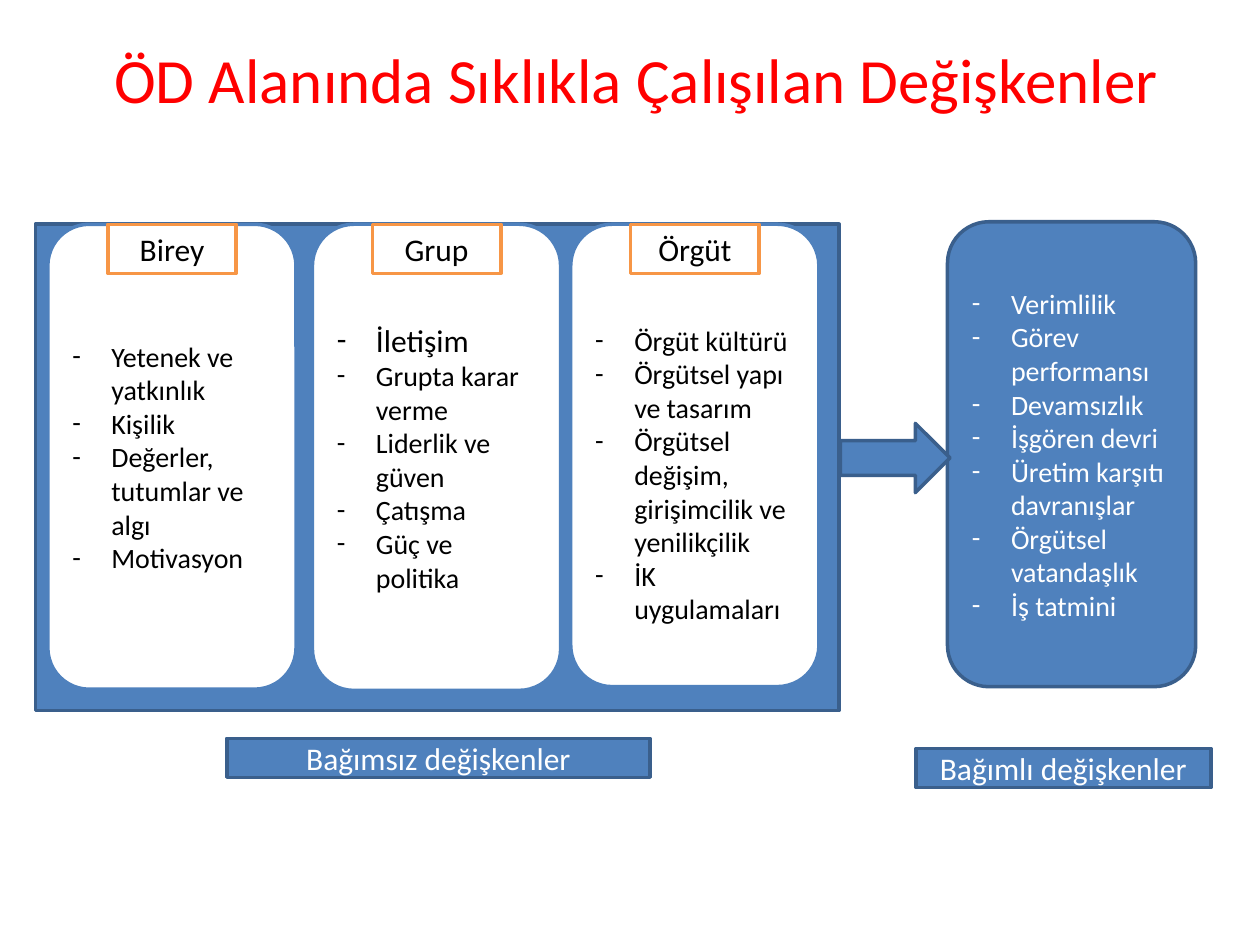
import collections
import pptx
import pptx.util
import pptx.dml.color
import pptx.enum.shapes
import pptx.enum.text
import pptx.oxml.xmlchemy
import lxml.etree

RGBColor = pptx.dml.color.RGBColor
Shapes = pptx.enum.shapes.MSO_SHAPE
Align = pptx.enum.text.PP_ALIGN
Anchor = pptx.enum.text.MSO_ANCHOR
Inches = pptx.util.Inches
Pt = pptx.util.Pt

BLUE = RGBColor(0x4F, 0x81, 0xBD)
DARK_BLUE = RGBColor(0x3A, 0x5F, 0x8C)
ORANGE = RGBColor(0xF7, 0x96, 0x46)
WHITE = RGBColor(0xFF, 0xFF, 0xFF)
BLACK = RGBColor(0, 0, 0)
RED = RGBColor(0xFF, 0, 0)

FONT = "Calibri"
SLIDE_WIDTH = Inches(10)
SLIDE_HEIGHT = Inches(7.5)
COLUMN = SLIDE_WIDTH / 100
ROW = SLIDE_HEIGHT / 75
DRAWING = "http://schemas.openxmlformats.org/drawingml/2006/main"

Box = collections.namedtuple("Box", "left top width height")
Level = collections.namedtuple("Level", "heading box items first_size top_gap")

LEVELS = [
    Level("Birey", Box(1, 0, 19.7, 36.9),
          ["Yetenek ve yatkınlık", "Kişilik", "Değerler, tutumlar ve algı",
           "Motivasyon"], 16, 0),
    Level("Grup", Box(22, 0, 19.7, 37),
          ["İletişim", "Grupta karar verme", "Liderlik ve güven", "Çatışma",
           "Güç ve politika"], 18, 0),
    Level("Örgüt", Box(42.5, 0, 19.7, 36.7),
          ["Örgüt kültürü", "Örgütsel yapı ve tasarım",
           "Örgütsel değişim, girişimcilik ve yenilikçilik",
           "İK uygulamaları"], 16, 3),
]
OUTCOMES = ["Verimlilik", "Görev performansı", "Devamsızlık", "İşgören devri",
            "Üretim karşıtı davranışlar", "Örgütsel vatandaşlık", "İş tatmini"]


def place(shape, box):
    shape.left, shape.width = int(box.left * COLUMN), int(box.width * COLUMN)
    shape.top, shape.height = int(box.top * ROW), int(box.height * ROW)


def inside(outer, inner):
    return inner._replace(left=outer.left + inner.left, top=outer.top + inner.top)


def add_run(paragraph, text, size, color):
    run = paragraph.add_run()
    run.text = text
    run.font.name = FONT
    run.font.size = Pt(size)
    run.font.color.rgb = color


def add_block(slide, kind, box, fill=BLUE, line=DARK_BLUE):
    shape = slide.shapes.add_shape(kind, 0, 0, 0, 0)
    place(shape, box)
    shape.shadow.inherit = False
    shape.fill.solid()
    shape.fill.fore_color.rgb = fill
    shape.line.color.rgb = line
    shape.line.width = Pt(2)
    shape.text_frame.word_wrap = True
    shape.text_frame.vertical_anchor = Anchor.MIDDLE
    return shape


def add_label(slide, box, text, fill=BLUE, line=DARK_BLUE, color=WHITE):
    shape = add_block(slide, Shapes.RECTANGLE, box, fill, line)
    paragraph = shape.text_frame.paragraphs[0]
    paragraph.alignment = Align.CENTER
    add_run(paragraph, text, 18, color)


def add_dash(paragraph):
    properties = paragraph._p.get_or_add_pPr()
    indent = Inches(0.31)
    properties.set("marL", str(indent))
    properties.set("indent", str(-indent))
    font = lxml.etree.SubElement(properties, f"{{{DRAWING}}}buFont")
    font.set("typeface", FONT)
    lxml.etree.SubElement(properties, f"{{{DRAWING}}}buChar").set("char", "-")


def add_list_card(slide, box, items, fill, line, color, first_size=16, top_gap=0):
    shape = add_block(slide, Shapes.ROUNDED_RECTANGLE, box, fill, line)
    frame = shape.text_frame
    frame.margin_top = int(Inches(0.05) + top_gap * ROW)
    for index, item in enumerate(items):
        paragraph = frame.add_paragraph() if index else frame.paragraphs[0]
        paragraph.alignment = Align.LEFT
        add_dash(paragraph)
        add_run(paragraph, item, 16 if index else first_size, color)


def add_title(slide, box):
    title = slide.shapes.title
    place(title, box)
    title.text_frame.vertical_anchor = Anchor.MIDDLE
    paragraph = title.text_frame.paragraphs[0]
    paragraph.alignment = Align.CENTER
    add_run(paragraph, "ÖD Alanında Sıklıkla Çalışılan Değişkenler", 36, RED)


def add_independent_variables(slide, box):
    add_block(slide, Shapes.RECTANGLE, box)
    for level in LEVELS:
        card = inside(box, level.box)
        add_list_card(slide, card, level.items, WHITE, BLUE, BLACK,
                      level.first_size, level.top_gap)
        tag_width = 10.2
        tag = Box((card.width - tag_width) / 2, 0, tag_width, 3.9)
        add_label(slide, inside(card, tag), level.heading, WHITE, ORANGE, BLACK)
    add_label(slide, inside(box, Box(15.2, 40.8, 33.6, 3.1)), "Bağımsız değişkenler")


def add_dependent_variables(slide, box):
    add_list_card(slide, box, OUTCOMES, BLUE, DARK_BLUE, WHITE)
    add_label(slide, inside(box, Box(-2.5, 41.8, 23.4, 3.1)), "Bağımlı değişkenler")


def main():
    presentation = pptx.Presentation()
    presentation.slide_width = SLIDE_WIDTH
    presentation.slide_height = SLIDE_HEIGHT
    slide = presentation.slides.add_slide(presentation.slide_layouts[5])
    add_title(slide, Box(5.5, 0, 90, 12.5))
    add_independent_variables(slide, Box(2.8, 17.8, 63.8, 38.6))
    add_dependent_variables(slide, Box(75.2, 17.6, 19.7, 36.9))
    add_block(slide, Shapes.RIGHT_ARROW, Box(66.7, 33.6, 8.7, 5.5))
    presentation.save("out.pptx")


if __name__ == "__main__":
    main()
